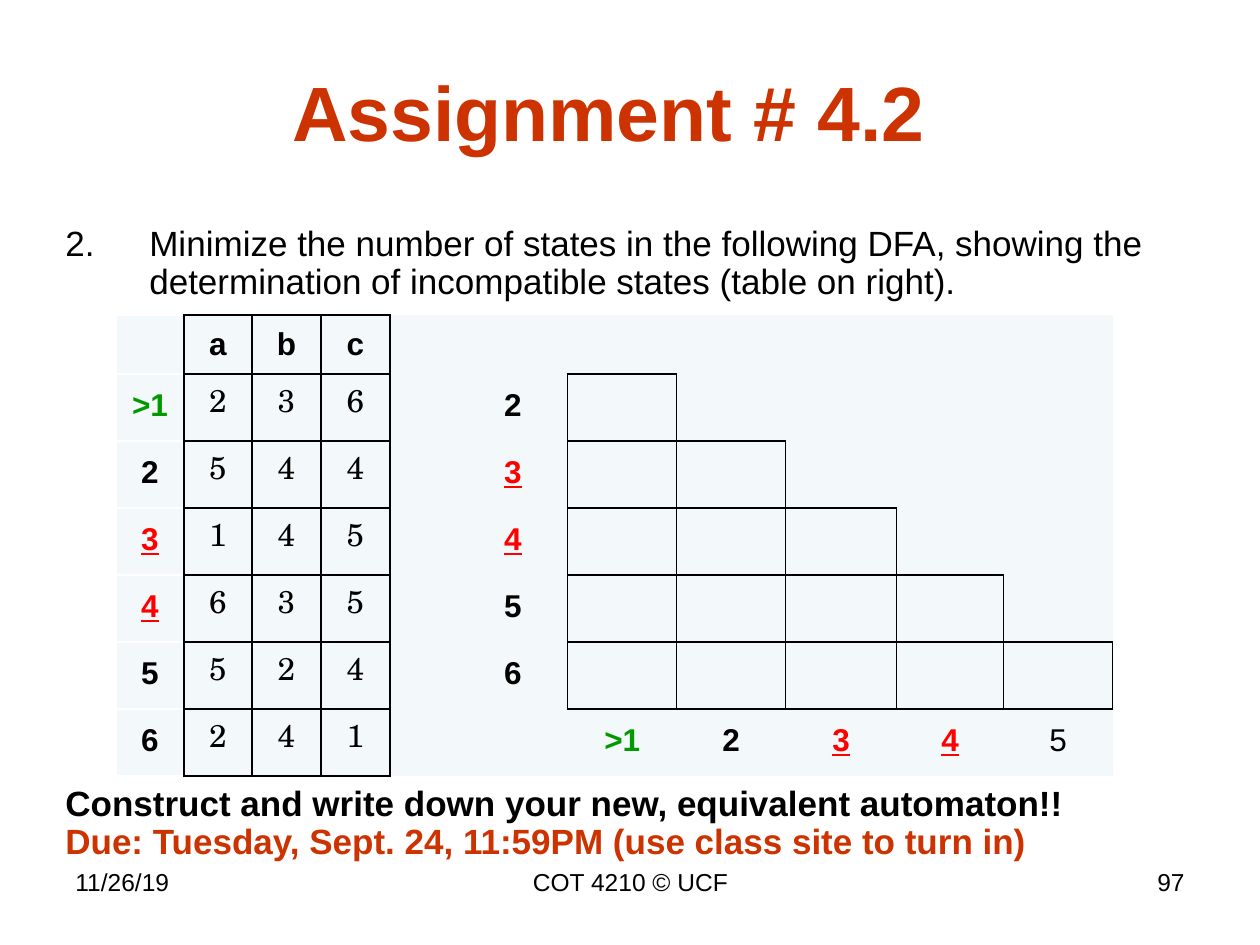
"""Build the slide that sets a DFA minimization task."""
from dataclasses import dataclass

from lxml.etree import SubElement as Sub
from pptx import Presentation
from pptx.dml.color import RGBColor as Rgb
from pptx.enum.text import MSO_ANCHOR as Anchor, PP_ALIGN as Align
from pptx.oxml.ns import qn
from pptx.util import Pt


@dataclass(frozen=True)
class Theme:
    ink: str = "000000"
    accent: str = "CC3300"
    start: str = "009900"
    final: str = "FF0000"
    pale: str = "F3F9FA"
    white: str = "FFFFFF"
    sans: str = "Arial"
    serif: str = "TeX Gyre Schola"
    head: int = 44
    body: int = 20
    cell: int = 18
    foot: int = 14
    lead: float = 0.9


T = Theme()
SCALE = 914400 / 126
INDENT = 84
COLS = [68, 68, 69, 69, 68, 110, 109, 109, 111, 107, 109]
ROWS = [59] + [67] * 6
STATES = [">1", "2", "3", "4", "5", "6"]
MOVES = ["236", "544", "145", "635", "524", "241"]
FINALS = "34"
STAIR = 6


def px(num):
    return round(num * SCALE)


def write(frame, text, size=T.body, color=T.ink, font=T.sans, bold=False,
          line=False, align=Align.LEFT, lead=None, gap=0, more=False):
    par = frame.add_paragraph() if more else frame.paragraphs[0]
    par.alignment = align
    par.space_before = par.space_after = Pt(gap)
    if lead:
        par.line_spacing = lead
    run = par.add_run()
    run.text = text
    face = run.font
    face.name, face.size = font, Pt(size)
    face.bold, face.underline = bold, line
    face.color.rgb = Rgb.from_string(color)
    return par


def add_box(slide, left, top, width, height):
    box = slide.shapes.add_textbox(*map(px, (left, top, width, height)))
    box.text_frame.word_wrap = True
    return box.text_frame


def number(par, start):
    props = par._p.get_or_add_pPr()
    props.set("marL", str(px(INDENT)))
    props.set("indent", str(px(-INDENT)))
    Sub(props, qn("a:buFont"), typeface=T.sans)
    Sub(props, qn("a:buAutoNum"), type="arabicPeriod", startAt=str(start))


def boxed(row, col):
    grid = 1 <= col <= 3 and 0 <= row < len(ROWS)
    stair = 1 <= row <= 5 and STAIR <= col < STAIR + row
    return grid or stair


def edge(cell, side, color):
    line = Sub(cell._tc.get_or_add_tcPr(), qn("a:ln" + side), w=str(Pt(1)))
    if color:
        Sub(Sub(line, qn("a:solidFill")), qn("a:srgbClr"), val=color)
    else:
        Sub(line, qn("a:noFill"))


def paint(cell, row, col):
    near = {"L": (0, -1), "R": (0, 1), "T": (-1, 0), "B": (1, 0)}
    for side, (down, right) in near.items():
        if boxed(row, col) or boxed(row + down, col + right):
            color = T.ink
        else:
            color = T.white if col == 0 else None
        edge(cell, side, color)
    cell.fill.solid()
    cell.fill.fore_color.rgb = Rgb.from_string(T.pale)
    cell.vertical_anchor = Anchor.MIDDLE
    cell.margin_left = cell.margin_right = px(8)
    cell.margin_top = cell.margin_bottom = 0


def fill(cell, text, **form):
    form = {"lead": Pt(18), "gap": 6, **form}
    write(cell.text_frame, text, size=T.cell, align=Align.CENTER, **form)


def label(cell, state, bold=True):
    final = state in FINALS
    color = T.start if ">" in state else T.final if final else T.ink
    fill(cell, state, color=color, bold=bold, line=final)


def add_grid(slide, left, top):
    frame = slide.shapes.add_table(len(ROWS), len(COLS), px(left), px(top),
                                   px(sum(COLS)), px(sum(ROWS)))
    grid = frame.table
    grid.first_row = grid.horz_banding = False
    for col, width in zip(grid.columns, COLS):
        col.width = px(width)
    for row, height in zip(grid.rows, ROWS):
        row.height = px(height)
    for row in range(len(ROWS)):
        for col in range(len(COLS)):
            paint(grid.cell(row, col), row, col)
    for col, sign in enumerate("abc", 1):
        fill(grid.cell(0, col), sign, bold=True, lead=None, gap=0)
    for row, (state, moves) in enumerate(zip(STATES, MOVES), 1):
        label(grid.cell(row, 0), state)
        for col, move in enumerate(moves, 1):
            fill(grid.cell(row, col), move, font=T.serif)
    for row, state in enumerate(STATES[1:], 1):
        label(grid.cell(row, STAIR - 1), state)
    for col, state in enumerate(STATES[:-1], STAIR):
        label(grid.cell(len(ROWS) - 1, col), state, bold=state != "5")


def add_title(slide, text):
    title = slide.shapes.title
    title.left, title.top, title.width, title.height = map(
        px, (42, 32, 1134, 158))
    title.text_frame.vertical_anchor = Anchor.MIDDLE
    write(title.text_frame, text, size=T.head, color=T.accent, bold=True,
          align=Align.CENTER)


def main():
    deck = Presentation()
    deck.slide_width, deck.slide_height = px(1260), px(945)
    slide = deck.slides.add_slide(deck.slide_layouts[5])
    add_title(slide, "Assignment # 4.2")
    task = write(add_box(slide, 53, 220, 1134, 90),
                 "Minimize the number of states in the following DFA, showing "
                 "the determination of incompatible states (table on right).",
                 lead=T.lead)
    number(task, 2)
    add_grid(slide, 116, 315)
    close = add_box(slide, 53, 780, 1134, 90)
    write(close, "Construct and write down your new, equivalent automaton!!",
          bold=True, lead=T.lead)
    write(close, "Due: Tuesday, Sept. 24, 11:59PM (use class site to turn in)",
          color=T.accent, bold=True, lead=T.lead, more=True)
    for left, width, text, align in (
            (63, 294, "11/26/19", Align.LEFT),
            (431, 399, "COT 4210 © UCF", Align.CENTER),
            (903, 294, "97", Align.RIGHT)):
        write(add_box(slide, left, 861, width, 65), text, size=T.foot,
              align=align)
    deck.save("out.pptx")


if __name__ == "__main__":
    main()
